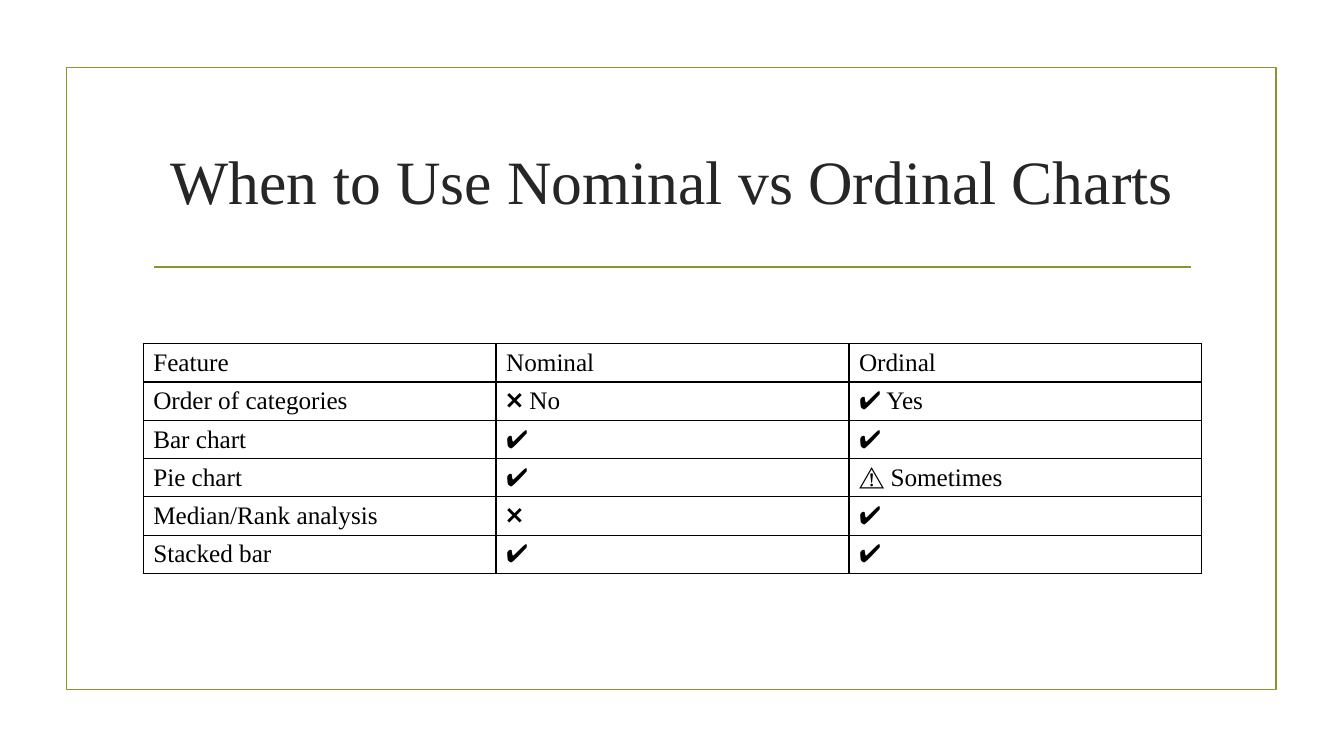
from lxml import etree
from pptx import Presentation, util as u
from pptx.dml.color import RGBColor
from pptx.enum import shapes, text
from pptx.oxml import ns

THEME = {
    "font": "Times New Roman",
    "accent": RGBColor.from_string("83992A"),
    "title": RGBColor.from_string("262626"),
    "ink": RGBColor.from_string("000000"),
    "title_size": u.Pt(44),
    "table_size": u.Pt(18),
    "rule": u.Pt(1.25),
    "border": u.Pt(1),
}
ROWS = [
    ("Feature", "Nominal", "Ordinal"),
    ("Order of categories", "❌ No", "✔️ Yes"),
    ("Bar chart", "✔️", "✔️"),
    ("Pie chart", "✔️", "⚠️ Sometimes"),
    ("Median/Rank analysis", "❌", "✔️"),
    ("Stacked bar", "✔️", "✔️"),
]

presentation = Presentation()
presentation.slide_width, presentation.slide_height = u.Inches(13.33), u.Inches(7.5)
slide = presentation.slides.add_slide(presentation.slide_layouts[6])
left, width = u.Inches(1.42), u.Inches(10.5)


def style_paragraph(paragraph, size, color):
    paragraph.font.name = THEME["font"]
    paragraph.font.size = size
    paragraph.font.color.rgb = color


# Frame
frame = slide.shapes.add_shape(
    shapes.MSO_SHAPE.RECTANGLE, u.Inches(0.66), u.Inches(0.67), u.Inches(12), u.Inches(6.17))
frame.shadow.inherit = False
frame.fill.background()
frame.line.color.rgb = THEME["accent"]
frame.line.width = THEME["rule"]

# Rule under the title
rule = slide.shapes.add_connector(
    shapes.MSO_CONNECTOR.STRAIGHT, u.Inches(1.53), u.Inches(2.65), u.Inches(11.81), u.Inches(2.65))
rule.line.color.rgb = THEME["accent"]
rule.line.width = THEME["rule"]
etree.SubElement(rule._element.spPr, ns.qn("a:effectLst"))

# Title
title = slide.shapes.add_textbox(left, u.Inches(1.07), width, u.Inches(1.43))
title.text_frame.word_wrap = True
title.text_frame.vertical_anchor = text.MSO_ANCHOR.MIDDLE
paragraph = title.text_frame.paragraphs[0]
paragraph.text = "When to Use Nominal vs Ordinal Charts"
paragraph.alignment = text.PP_ALIGN.CENTER
style_paragraph(paragraph, THEME["title_size"], THEME["title"])

# Comparison table
table = slide.shapes.add_table(
    len(ROWS), len(ROWS[0]), left, u.Inches(3.41), width, u.Inches(2.27)).table
table.first_row = table.horz_banding = False
for row_index, row in enumerate(ROWS):
    for column_index, label in enumerate(row):
        cell = table.cell(row_index, column_index)
        cell.text = label
        cell.vertical_anchor = text.MSO_ANCHOR.MIDDLE
        cell.margin_top = cell.margin_bottom = u.Inches(0.04)
        style_paragraph(cell.text_frame.paragraphs[0], THEME["table_size"], THEME["ink"])
        # Borders come before the fill
        properties = cell._tc.get_or_add_tcPr()
        for side in ("lnL", "lnR", "lnT", "lnB"):
            border = etree.SubElement(properties, ns.qn(f"a:{side}"), w=str(THEME["border"]))
            solid = etree.SubElement(border, ns.qn("a:solidFill"))
            etree.SubElement(solid, ns.qn("a:srgbClr"), val=str(THEME["ink"]))
        cell.fill.background()

presentation.save("out.pptx")
